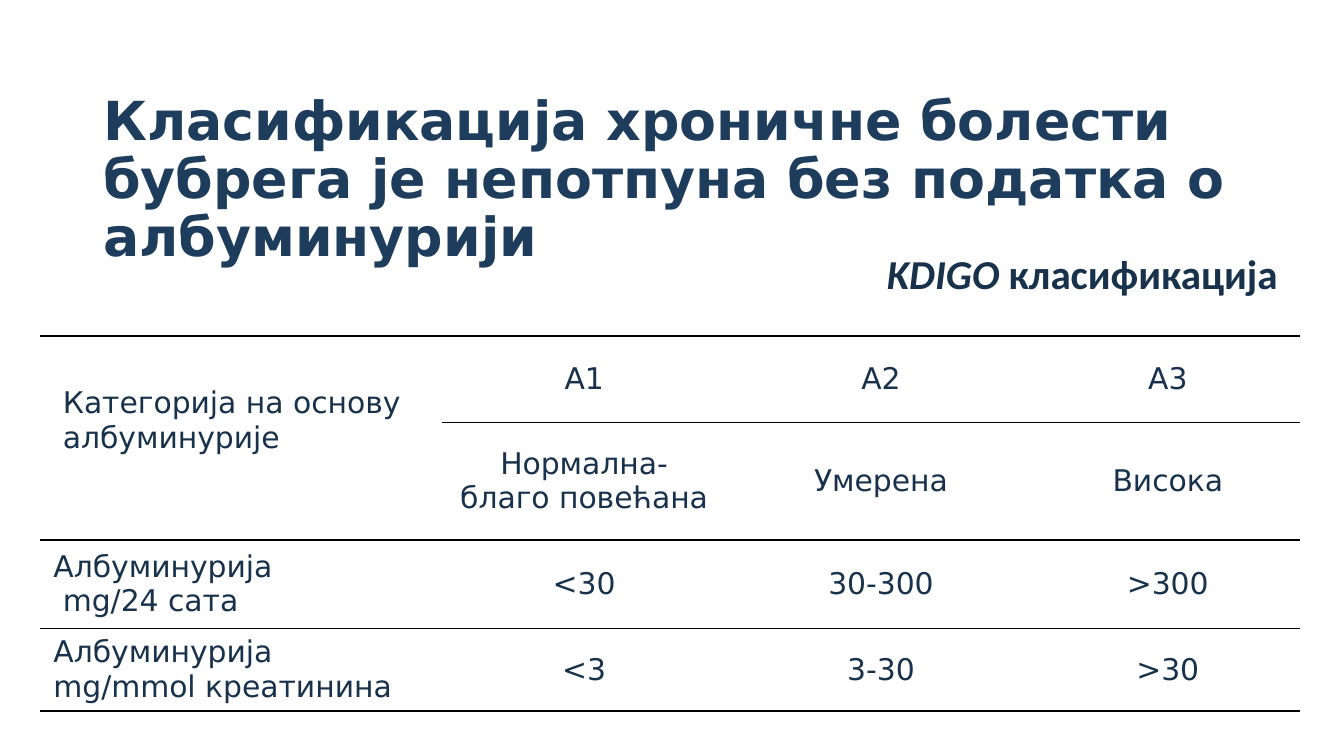
"""Build a slide that classifies chronic kidney disease by albuminuria."""
from dataclasses import dataclass

from lxml import etree
from pptx import Presentation
from pptx.dml.color import RGBColor
from pptx.enum.text import MSO_ANCHOR, PP_ALIGN
from pptx.oxml.ns import qn
from pptx.util import Cm, Pt

MIDDLE, TOP = MSO_ANCHOR.MIDDLE, MSO_ANCHOR.TOP
LEFT, CENTER = PP_ALIGN.LEFT, PP_ALIGN.CENTER


@dataclass(frozen=True)
class Theme:
    title_color: str = "1E3D5C"
    text_color: str = "19324B"
    rule_color: str = "000000"
    cell_color: str = "FFFFFF"
    title_size: float = 28.8
    label_size: float = 22
    cell_size: float = 16
    main_font: str = "DejaVu Sans"
    label_font: str = "Calibri"
    rule_width: float = 1


class SlideBuilder:
    def __init__(self, page, theme):
        self.page = page
        self.theme = theme

    def span(self, para, text, color, **formats):
        span = para.add_run()
        span.text = text
        for name, value in formats.items():
            setattr(span.font, name, value)
        span.font.color.rgb = RGBColor.from_string(color)

    def text_box(self, place, wrap, anchor):
        box = self.page.shapes.add_textbox(*map(Cm, place))
        formats = {"word_wrap": wrap, "vertical_anchor": anchor}
        for name, value in formats.items():
            setattr(box.text_frame, name, value)
        return box.text_frame.paragraphs[0]

    def title(self, text, place):
        para = self.text_box(place, True, MIDDLE)
        para.line_spacing = 0.9
        self.span(para, text, self.theme.title_color, bold=True,
                  name=self.theme.main_font, size=Pt(self.theme.title_size))

    def label(self, spans, place):
        para = self.text_box(place, False, TOP)
        for text, italic in spans:
            self.span(para, text, self.theme.text_color, bold=True, italic=italic,
                      name=self.theme.label_font, size=Pt(self.theme.label_size))

    def rules(self, cell):
        properties = cell._tc.get_or_add_tcPr()
        for edge in ("lnL", "lnR", "lnT", "lnB"):
            line = etree.SubElement(properties, qn(f"a:{edge}"), w=str(Pt(self.theme.rule_width)))
            if edge in ("lnT", "lnB"):
                fill = etree.SubElement(line, qn("a:solidFill"))
                etree.SubElement(fill, qn("a:srgbClr"), val=self.theme.rule_color)
            else:
                etree.SubElement(line, qn("a:noFill"))

    def cell(self, cell, text, align):
        self.rules(cell)
        cell.fill.solid()
        cell.fill.fore_color.rgb = RGBColor.from_string(self.theme.cell_color)
        formats = {"vertical_anchor": MIDDLE, "margin_left": Cm(0.25), "margin_right": Cm(0.25),
                   "margin_top": Cm(0.1), "margin_bottom": Cm(0.1)}
        for name, value in formats.items():
            setattr(cell, name, value)
        if not text:
            return
        for index, line in enumerate(text.split("\n")):
            frame = cell.text_frame
            para = frame.add_paragraph() if index else frame.paragraphs[0]
            para.alignment = align
            self.span(para, line, self.theme.text_color,
                      name=self.theme.main_font, size=Pt(self.theme.cell_size))

    def table(self, rows, corner, widths, heights):
        place = (*corner, sum(widths), sum(heights))
        table = self.page.shapes.add_table(len(rows), len(widths), *map(Cm, place)).table
        table.first_row = table.horz_banding = False
        for column, width in zip(table.columns, widths):
            column.width = Cm(width)
        for row, height in zip(table.rows, heights):
            row.height = Cm(height)
        for row, texts in enumerate(rows):
            for column, text in enumerate(texts):
                self.cell(table.cell(row, column), text, CENTER if column else LEFT)
        return table


def main():
    deck = Presentation()
    deck.slide_width, deck.slide_height = Cm(25.4), Cm(14.28)
    page = deck.slides.add_slide(deck.slide_layouts[6])
    builder = SlideBuilder(page, Theme())
    builder.title("Класификација хроничне болести бубрега је непотпуна без податка о албуминурији",
                  (1.7, 2.39, 23.7, 2.06))
    categories = [
        (" Категорија на основу\n албуминурије", "А1", "А2", "А3"),
        ("", "Нормална-\nблагo повећана", "Умерена", "Висока"),
        ("Албуминурија\n mg/24 сата", "<30", "30-300", ">300"),
        ("Албуминурија\nmg/mmol креатинина", "<3", "3-30", ">30"),
    ]
    table = builder.table(categories, (0.76, 6.35), (7.59, 5.38, 5.84, 5), (1.63, 2.14, 1.68, 1.5))
    heading = table.cell(0, 0)
    heading.merge(table.cell(1, 0))
    heading.margin_bottom = Cm(0.76)
    builder.label([("KDIGO ", True), ("класификација", False)], (16.51, 4.57, 8, 1.19))
    deck.save("out.pptx")


if __name__ == "__main__":
    main()
